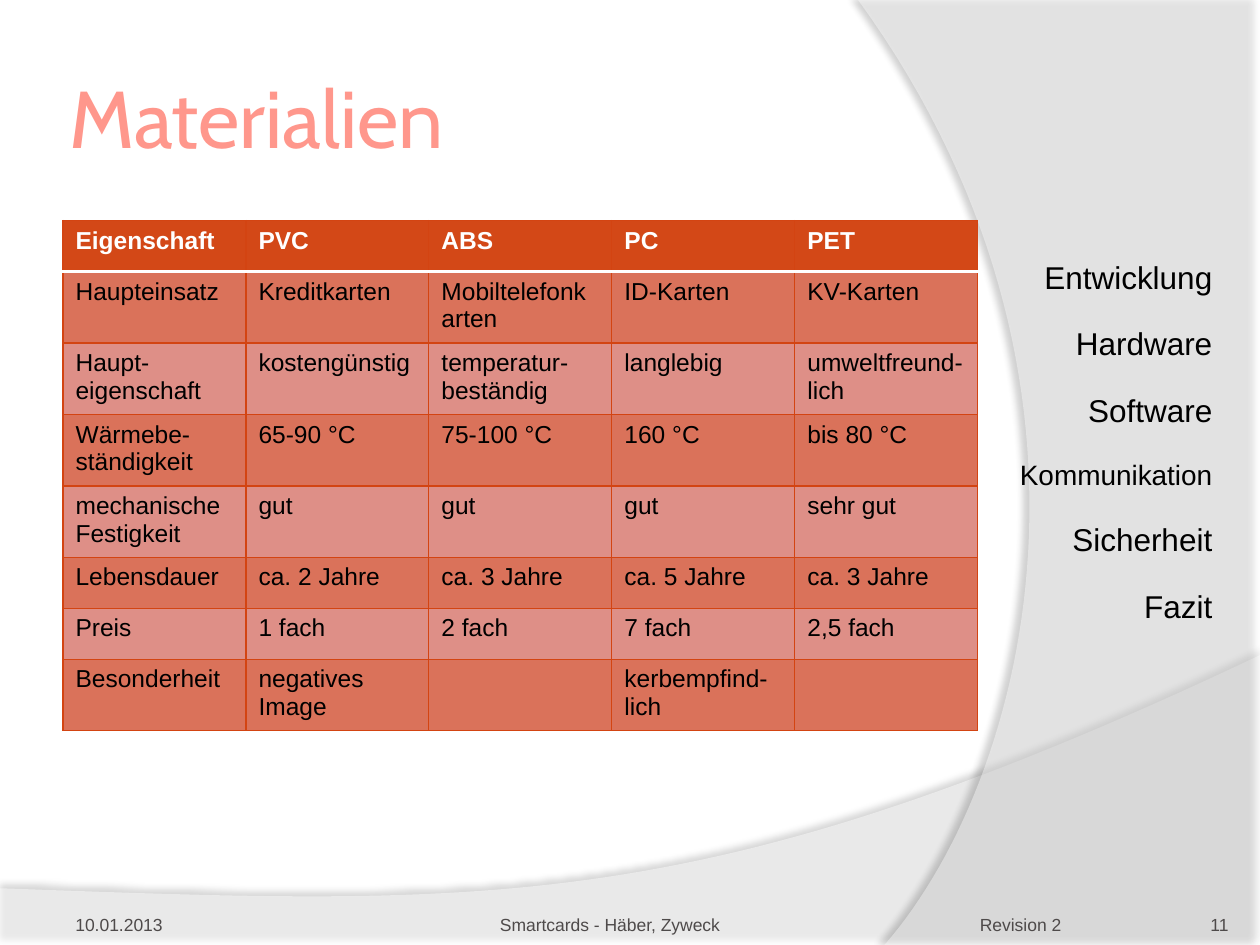
from lxml import etree
from pptx import Presentation, util as u
from pptx.dml.color import RGBColor
from pptx.enum import text as t
from pptx.oxml.ns import qn

WIDE, HIGH = 10, 7.5
LEFT, SPAN = 0.05 * WIDE, 0.726 * WIDE
HUE = {"title": "FF978C", "head": "D34817", "dark": "DA725A", "light": "DE8F87",
       "edge": "D34412", "white": "FFFFFF", "black": "000000", "foot": "4E4A4A"}
ROWS = [
    ["Eigenschaft", "PVC", "ABS", "PC", "PET"],
    ["Haupteinsatz", "Kreditkarten", "Mobiltelefonkarten", "ID-Karten", "KV-Karten"],
    ["Haupt-eigenschaft", "kostengünstig", "temperatur-beständig", "langlebig",
     "umweltfreund-lich"],
    ["Wärmebe-ständigkeit", "65-90 °C", "75-100 °C", "160 °C", "bis 80 °C"],
    ["mechanische Festigkeit", "gut", "gut", "gut", "sehr gut"],
    ["Lebensdauer", "ca. 2 Jahre", "ca. 3 Jahre", "ca. 5 Jahre", "ca. 3 Jahre"],
    ["Preis", "1 fach", "2 fach", "7 fach", "2,5 fach"],
    ["Besonderheit", "negatives Image", "", "kerbempfind-lich", ""],
]
TOPICS = [("Entwicklung", 18), ("Hardware", 18), ("Software", 18),
          ("Kommunikation", 16), ("Sicherheit", 18), ("Fazit", 18)]
ALIGN, ANCHOR = t.PP_ALIGN, t.MSO_ANCHOR


def rgb(name):
    return RGBColor.from_string(HUE[name])


def sub(node, tag, **attrs):
    return etree.SubElement(node, qn(tag), {k: str(v) for k, v in attrs.items()})


def style(para, size, hue, face="Arial", bold=False):
    font = para.font
    font.name, font.size, font.bold = face, u.Pt(size), bold
    font.color.rgb = rgb(hue)


def curve(a, b, c, d, steps=60):
    """Points along a cubic Bezier curve."""
    for i in range(steps + 1):
        s = i / steps
        yield tuple((1 - s) ** 3 * p + 3 * s * (1 - s) ** 2 * q
                    + 3 * s * s * (1 - s) * r + s ** 3 * z
                    for p, q, r, z in zip(a, b, c, d))


def sweep(slide, points, alpha, shade, dist, angle):
    """Translucent white area with a soft shadow."""
    first, *rest = [(u.Inches(x), u.Inches(y)) for x, y in points]
    build = slide.shapes.build_freeform(*first, scale=1.0)
    build.add_line_segments(rest, close=True)
    form = build.convert_to_shape()
    form.line.fill.background()
    form.fill.solid()
    form.fill.fore_color.rgb = rgb("white")
    props = form._element.spPr
    sub(props.find(".//" + qn("a:srgbClr")), "a:alpha", val=alpha * 1000)
    shadow = sub(sub(props, "a:effectLst"), "a:outerShdw", blurRad=u.Pt(4),
                 dist=u.Pt(dist), dir=angle * 60000, algn="ctr", rotWithShape=0)
    sub(sub(shadow, "a:srgbClr", val=HUE["black"]), "a:alpha", val=shade * 1000)


def label(slide, box, lines, hue, align=ALIGN.LEFT, anchor=ANCHOR.BOTTOM,
          pad=(0, 0.05, 0, 0), face="Arial", gaps=(0, 0)):
    """Text box holding one paragraph per (words, size) pair."""
    frame = slide.shapes.add_textbox(*map(u.Inches, box)).text_frame
    frame.word_wrap, frame.vertical_anchor = True, anchor
    (frame.margin_left, frame.margin_top,
     frame.margin_right, frame.margin_bottom) = map(u.Inches, pad)
    for i, (words, size) in enumerate(lines):
        para = frame.add_paragraph() if i else frame.paragraphs[0]
        para.text, para.alignment = words, align
        para.space_before, para.space_after = map(u.Pt, gaps)
        style(para, size, hue, face)


def border(cell, side, hue, width):
    line = sub(cell._tc.get_or_add_tcPr(), "a:ln" + side, w=u.Pt(width))
    sub(sub(line, "a:solidFill"), "a:srgbClr", val=HUE[hue])


def grid(slide):
    """Table with a strong header and alternating rows."""
    row, cols = 0.405, len(ROWS[0])
    table = slide.shapes.add_table(
        len(ROWS), cols, *map(u.Inches, (LEFT, 1.75, SPAN, row * len(ROWS)))).table
    for col in table.columns:
        col.width = u.Inches(SPAN / cols)
    for i, words in enumerate(ROWS):
        table.rows[i].height = u.Inches(row)
        fill = "head" if i == 0 else "dark" if i % 2 else "light"
        for j, word in enumerate(words):
            cell = table.cell(i, j)
            cell.text = word
            style(cell.text_frame.paragraphs[0], 14,
                  "black" if i else "white", bold=i == 0)
            for side in "LRTB":
                rule = (i, side) in ((0, "B"), (1, "T"))
                border(cell, side, *(("white", 2) if rule else ("edge", 0.75)))
            cell.fill.solid()
            cell.fill.fore_color.rgb = rgb(fill)


def main():
    deck = Presentation()
    deck.slide_width, deck.slide_height = u.Inches(WIDE), u.Inches(HIGH)
    slide = deck.slides.add_slide(deck.slide_layouts[6])

    # Background sweeps
    low = curve((WIDE, 5.2), (5.59, 7.29), (3.91, 7.19), (0, 7.05))
    sweep(slide, [(0, HIGH), (WIDE, HIGH), *low], 45, 35, 3.5, 270)
    side = curve((7.02, HIGH), (8.16, 6.19), (8.99, 3), (6.81, 0))
    sweep(slide, [(WIDE, 0), (WIDE, HIGH), *side], 40, 45, 4, 180)

    # Topic list
    label(slide, (7.93, 0.29, 1.79, 6.42), TOPICS, "black", ALIGN.RIGHT,
          ANCHOR.MIDDLE, (0.1, 0.05, 0.1, 0.05), gaps=(4.5, 12))

    # Title and table
    label(slide, (LEFT, 0.3, SPAN, 1.25), [("Materialien", 46)], "title",
          anchor=ANCHOR.MIDDLE, pad=[0.05] * 4, face="Cabin")
    grid(slide)

    # Footer
    for words, x, wide, align, pad in (
            ("10.01.2013", LEFT, 1.74, ALIGN.LEFT, 0.1),
            ("Smartcards - Häber, Zyweck", 2.48, 4.72, ALIGN.CENTER, 0),
            ("Revision 2", 7.47, 1.26, ALIGN.CENTER, 0),
            ("11", 8.92, 0.83, ALIGN.RIGHT, 0)):
        label(slide, (x, 7.02, wide, 0.4), [(words, 10)], "foot", align,
              pad=(pad, 0.05, pad, 0))

    deck.save("out.pptx")


if __name__ == "__main__":
    main()
